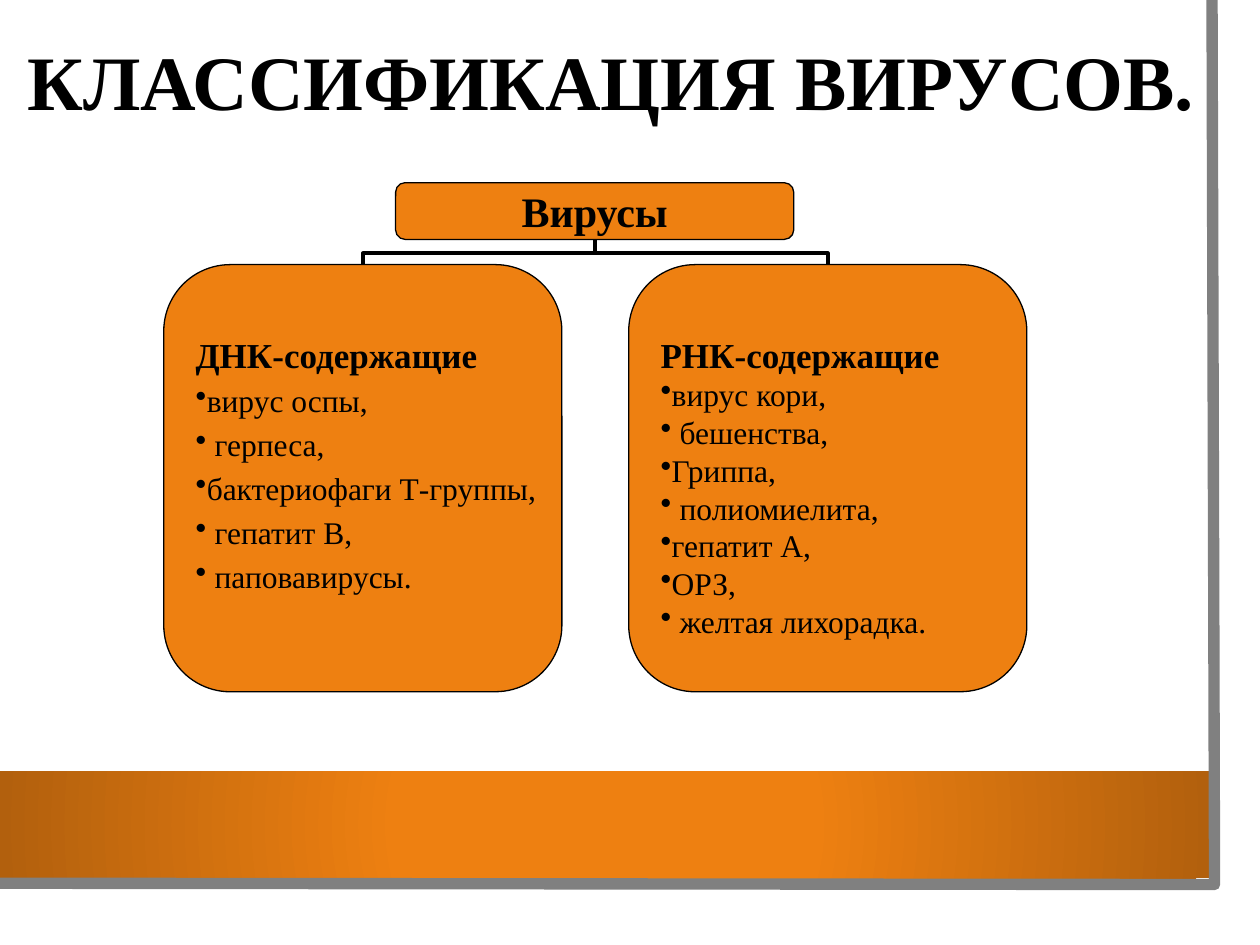
from dataclasses import dataclass

from lxml.etree import SubElement
from pptx import Presentation
from pptx.dml.color import RGBColor
from pptx.enum.shapes import MSO_CONNECTOR as Connector, MSO_SHAPE as Shape
from pptx.enum.text import MSO_ANCHOR as Anchor, PP_ALIGN as Align
from pptx.oxml import parse_xml
from pptx.oxml.ns import nsdecls, qn
from pptx.util import Inches, Pt

BLACK = RGBColor(0x00, 0x00, 0x00)
GRAY = RGBColor(0x80, 0x80, 0x80)
ORANGE = RGBColor(0xEE, 0x80, 0x11)
BROWN = RGBColor(0xB2, 0x60, 0x0D)
FONT = "Times New Roman"

BOX_WIDTH = 3.16
ROOT_LEFT, ROOT_TOP, ROOT_HEIGHT = 3.14, 1.45, 0.45
ROOT_CENTER = ROOT_LEFT + BOX_WIDTH / 2
ROOT_BOTTOM = ROOT_TOP + ROOT_HEIGHT
GROUP_TOP, GROUP_HEIGHT = 2.1, 3.39


@dataclass
class VirusGroup:
    left: float
    heading: str
    members: list[str]
    space_before: float


GROUPS = [
    VirusGroup(1.3, "ДНК-содержащие",
               ["вирус оспы,", " герпеса,", "бактериофаги Т-группы,",
                " гепатит B,", " паповавирусы."], 3.5),
    VirusGroup(4.99, "РНК-содержащие",
               ["вирус кори,", " бешенства,", "Гриппа,", " полиомиелита,",
                "гепатит A,", "ОРЗ,", " желтая лихорадка."], 0),
]


def write_text(paragraph, text: str, *, size: float, bold=False, align=Align.LEFT,
               bullet=False, space_before: float = 0, line_spacing: float = 1.0) -> None:
    paragraph.alignment = align
    paragraph.line_spacing = line_spacing
    paragraph.space_before = Pt(space_before)
    if bullet:
        properties = paragraph._p.get_or_add_pPr()
        properties.set("marL", "0")
        properties.set("indent", "0")
        SubElement(properties, qn("a:buChar")).set("char", "•")
    run = paragraph.add_run()
    run.text = text
    run.font.name = FONT
    run.font.size = Pt(size)
    run.font.bold = bold
    run.font.color.rgb = BLACK


def add_box(slide, left: float, top: float, height: float):
    box = slide.shapes.add_shape(Shape.ROUNDED_RECTANGLE, Inches(left), Inches(top),
                                 Inches(BOX_WIDTH), Inches(height))
    box.shadow.inherit = False
    box.adjustments[0] = 0.167
    box.fill.solid()
    box.fill.fore_color.rgb = ORANGE
    box.line.color.rgb = BLACK
    box.line.width = Pt(0.75)
    box.text_frame.word_wrap = True
    box.text_frame.vertical_anchor = Anchor.MIDDLE
    return box


def add_branch(slide, group: VirusGroup) -> None:
    """Join a group to the root by an elbow turned to run vertically."""
    group_center = group.left + BOX_WIDTH / 2
    on_right = group_center > ROOT_CENTER
    half_drop = (GROUP_TOP - ROOT_BOTTOM) / 2 * (1 if on_right else -1)
    half_span = abs(group_center - ROOT_CENTER) / 2
    x = (group_center + ROOT_CENTER) / 2
    y = (GROUP_TOP + ROOT_BOTTOM) / 2
    branch = slide.shapes.add_connector(
        Connector.ELBOW, Inches(x + half_drop), Inches(y - half_span),
        Inches(x - half_drop), Inches(y + half_span))
    branch.line.color.rgb = BLACK
    branch.line.width = Pt(2.25)
    properties = branch._element.spPr
    properties.find(qn("a:xfrm")).set("rot", str((90 if on_right else 270) * 60000))
    guide = SubElement(properties.find(qn("a:prstGeom")).find(qn("a:avLst")), qn("a:gd"))
    guide.set("name", "adj1")
    guide.set("fmla", "val 44400")
    SubElement(properties, qn("a:effectLst"))


def add_group(slide, group: VirusGroup) -> None:
    frame = add_box(slide, group.left, GROUP_TOP, GROUP_HEIGHT).text_frame
    frame.vertical_anchor = Anchor.TOP
    frame.margin_top = Inches(0.39)
    frame.margin_right = 0
    write_text(frame.paragraphs[0], group.heading, size=20, bold=True)
    for member in group.members:
        write_text(frame.add_paragraph(), member, size=18, bullet=True,
                   space_before=group.space_before)


def add_backdrop(slide) -> None:
    # Orange band with a radial gradient
    band = slide.shapes.add_shape(Shape.RECTANGLE, 0, Inches(6.12), Inches(9.6), Inches(0.85))
    band.shadow.inherit = False
    band.line.fill.background()
    gradient = parse_xml(
        f'<a:gradFill {nsdecls("a")} rotWithShape="1"><a:gsLst>'
        f'<a:gs pos="34000"><a:srgbClr val="{ORANGE}"/></a:gs>'
        f'<a:gs pos="100000"><a:srgbClr val="{BROWN}"/></a:gs></a:gsLst>'
        '<a:path path="circle"><a:fillToRect l="50000" t="50000" r="50000" b="50000"/>'
        '</a:path></a:gradFill>')
    band._element.spPr.find(qn("a:prstGeom")).addnext(gradient)

    # Gray edge on the right and below
    builder = slide.shapes.build_freeform(Inches(9.62), 0)
    builder.add_line_segments([(Inches(9.64), Inches(7.02)), (Inches(-0.02), Inches(7.01))],
                              close=False)
    edge = builder.convert_to_shape()
    edge.shadow.inherit = False
    edge.fill.background()
    edge.line.color.rgb = GRAY
    edge.line.width = Pt(6.5)


def main() -> None:
    presentation = Presentation()
    presentation.slide_width, presentation.slide_height = Inches(10), Inches(7.5)
    slide = presentation.slides.add_slide(presentation.slide_layouts[6])
    add_backdrop(slide)

    # Title
    title = slide.shapes.add_textbox(Inches(0.12), Inches(0.05), Inches(9.53), Inches(1.25))
    title.text_frame.word_wrap = True
    title.text_frame.vertical_anchor = Anchor.MIDDLE
    write_text(title.text_frame.paragraphs[0], "КЛАССИФИКАЦИЯ ВИРУСОВ.",
               size=44, bold=True, line_spacing=0.9)

    # Classification tree
    for group in reversed(GROUPS):
        add_branch(slide, group)
    root = add_box(slide, ROOT_LEFT, ROOT_TOP, ROOT_HEIGHT)
    write_text(root.text_frame.paragraphs[0], "Вирусы", size=24, bold=True,
               align=Align.CENTER)
    for group in GROUPS:
        add_group(slide, group)

    presentation.save("out.pptx")


if __name__ == "__main__":
    main()
